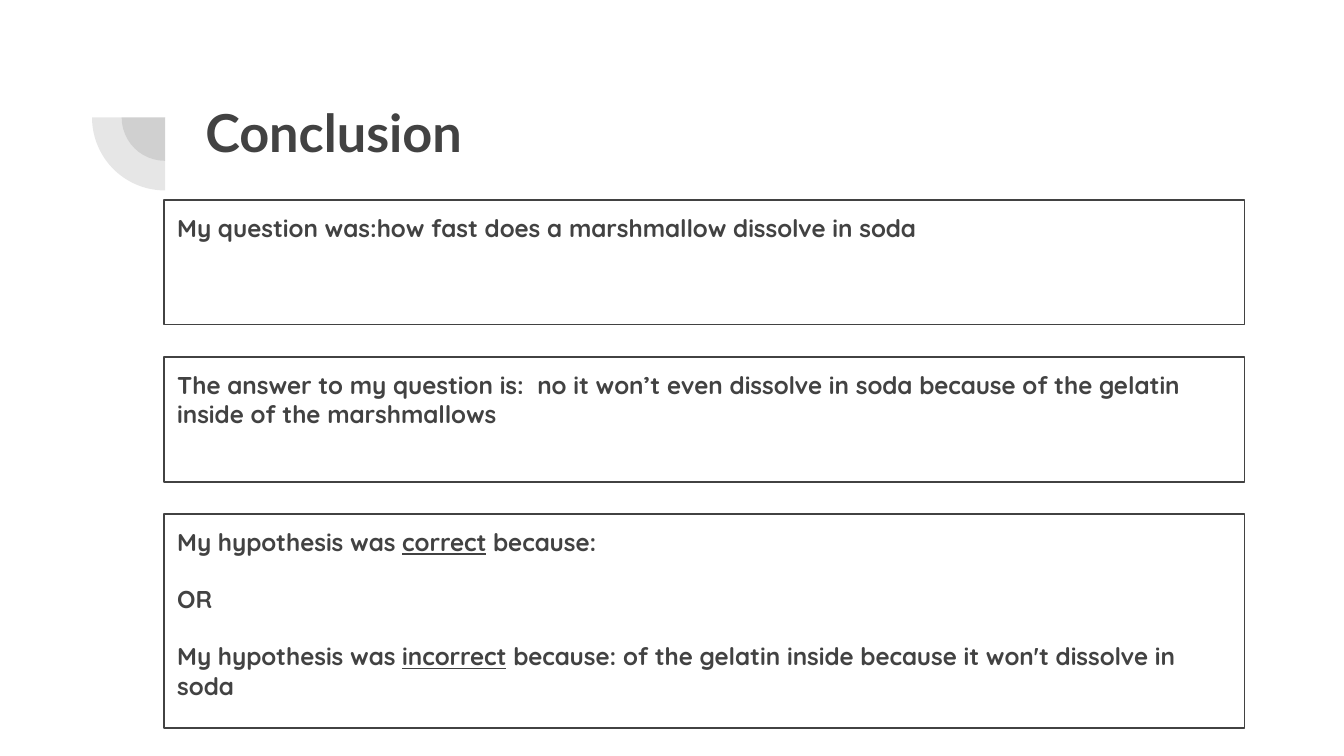
from pptx import Presentation
from pptx.dml.color import RGBColor
from pptx.enum.shapes import MSO_SHAPE as Shape
from pptx.enum.text import MSO_ANCHOR as Anchor, PP_ALIGN as Align
from pptx.util import Cm, Pt
from pptx.oxml.xmlchemy import OxmlElement

INK = RGBColor(0x42, 0x42, 0x42)
MARGIN = Cm(0.25)
TITLE_FONT = {"name": "Lato", "size": Pt(28), "bold": True}
BODY_FONT = {"name": "Quicksand", "size": Pt(13), "bold": True}
FRAME = {
    "word_wrap": True, "vertical_anchor": Anchor.TOP,
    "margin_left": MARGIN, "margin_right": MARGIN,
    "margin_top": MARGIN, "margin_bottom": MARGIN,
}

# Each paragraph is a list of (text, underlined) runs.
QUESTION = [[("My question was:how fast does a marshmallow dissolve in soda", False)]]
ANSWER = [[("The answer to my question is:  no it won’t even dissolve in soda "
            "because of the gelatin inside of the marshmallows", False)]]
HYPOTHESIS = [
    [("My hypothesis was ", False), ("correct", True), (" because:", False)],
    [("OR", False)],
    [("My hypothesis was ", False), ("incorrect", True),
     (" because: of the gelatin inside because it won't dissolve in soda", False)],
]


def set_format(obj, values):
    for name, value in values.items():
        setattr(obj, name, value)


def add_run(p, text, font, underline=False):
    r = p.add_run()
    r.text = text
    set_format(r.font, font)
    r.font.color.rgb = INK
    if underline:
        r.font.underline = True


def add_quarter_rings(slide, cx, cy, radii):
    """Overlapping translucent quarter discs, lower left of a shared centre."""
    for radius in radii:
        sp = slide.shapes.add_shape(Shape.PIE, cx - radius, cy - radius,
                                    2 * radius, 2 * radius)
        sp.adjustments[0], sp.adjustments[1] = 108, 162
        sp.rotation = 270
        sp.shadow.inherit = False
        sp.fill.solid()
        sp.fill.fore_color.rgb = INK
        alpha = OxmlElement("a:alpha")
        alpha.set("val", "13000")
        sp.fill._xPr.find(".//{*}srgbClr").append(alpha)
        sp.line.fill.background()


def place_title(slide, box, text):
    sp = slide.shapes.title
    sp.left, sp.top, sp.width, sp.height = box
    set_format(sp.text_frame, FRAME)
    p = sp.text_frame.paragraphs[0]
    p.alignment = Align.LEFT
    add_run(p, text, TITLE_FONT)


def add_answer_box(slide, box, paragraphs):
    sp = slide.shapes.add_shape(Shape.RECTANGLE, *box)
    sp.shadow.inherit = False
    sp.fill.background()
    sp.line.color.rgb = INK
    sp.line.width = Pt(0.75)
    tf = sp.text_frame
    set_format(tf, FRAME)
    for i, runs in enumerate(paragraphs):
        p = tf.add_paragraph() if i else tf.paragraphs[0]
        p.alignment = Align.LEFT
        p.space_before = Pt(15 if i else 0)
        for text, underline in runs:
            add_run(p, text, BODY_FONT, underline)


def build_conclusion(prs):
    slide = prs.slides.add_slide(prs.slide_layouts[5])
    add_quarter_rings(slide, Cm(3.12), Cm(2.22), (Cm(0.82), Cm(1.38)))
    place_title(slide, (Cm(3.63), Cm(1.65), Cm(19.53), Cm(2.06)), "Conclusion")
    top, gap = Cm(3.78), Cm(0.61)
    for height, paragraphs in ((Cm(2.36), QUESTION), (Cm(2.36), ANSWER),
                               (Cm(4.04), HYPOTHESIS)):
        add_answer_box(slide, (Cm(3.1), top, Cm(20.42), height), paragraphs)
        top += height + gap


def main():
    prs = Presentation()
    prs.slide_width, prs.slide_height = Cm(25.4), Cm(14.29)
    build_conclusion(prs)
    prs.save("out.pptx")


if __name__ == "__main__":
    main()
